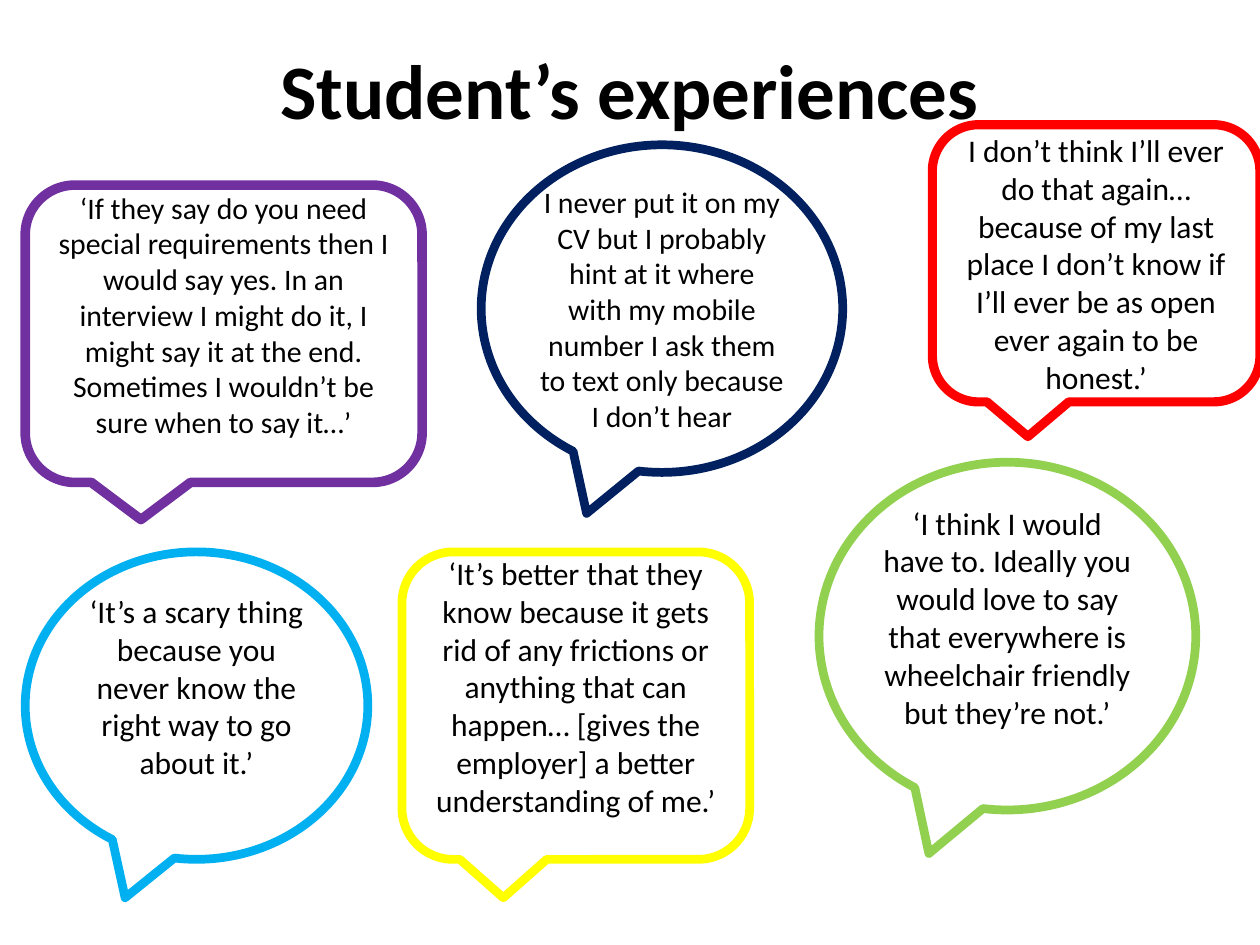
from lxml import etree
from pptx import Presentation
from pptx.dml.color import RGBColor
from pptx.enum.shapes import MSO_SHAPE
from pptx.enum.text import MSO_ANCHOR, PP_ALIGN
from pptx.oxml.ns import qn
from pptx.util import Pt

ROUND = MSO_SHAPE.ROUNDED_RECTANGULAR_CALLOUT
OVAL = MSO_SHAPE.OVAL_CALLOUT
CENTER = PP_ALIGN.CENTER
TOP, MIDDLE = MSO_ANCHOR.TOP, MSO_ANCHOR.MIDDLE

BLACK = RGBColor(0x00, 0x00, 0x00)
PURPLE = RGBColor(0x70, 0x30, 0xA0)
RED = RGBColor(0xFF, 0x00, 0x00)
BLUE = RGBColor(0x00, 0xB0, 0xF0)
GREEN = RGBColor(0x92, 0xD0, 0x50)
YELLOW = RGBColor(0xFF, 0xFF, 0x00)
NAVY = RGBColor(0x00, 0x20, 0x60)

TITLE = "Student’s experiences"
THIN = (3, 3, 3, 3)
RAISED = (3, 3, 3, 25)
WIDE_RAISED = (7.2, 3.6, 7.2, 25.6)

QUOTES = [
    (ROUND, (14.4, 105.8, 226.8, 169.9), PURPLE, 5.5, 17, RAISED,
     "‘If they say do you need special requirements then I would say yes. "
     "In an interview I might do it, I might say it at the end. "
     "Sometimes I wouldn’t be sure when to say it…’"),
    (ROUND, (532.8, 71.3, 187.2, 158.4), RED, 5.25, 18, THIN,
     "I don’t think I’ll ever do that again… because of my last place "
     "I don’t know if I’ll ever be as open ever again to be honest.’"),
    (OVAL, (14.4, 315.4, 195.8, 175.7), BLUE, 5, 18, RAISED,
     "‘It’s a scary thing because you never know the right way to go about it.’"),
    (OVAL, (468, 264.2, 215.3, 198.7), GREEN, 5, 18, RAISED,
     "‘I think I would have to. Ideally you would love to say that "
     "everywhere is wheelchair friendly but they’re not.’"),
    (ROUND, (229.7, 315.4, 198.7, 175.7), YELLOW, 5, 18, WIDE_RAISED,
     "‘It’s better that they know because it gets rid of any frictions or "
     "anything that can happen… [gives the employer] a better understanding of me.’"),
    (OVAL, (275, 82.8, 206.6, 187.2), NAVY, 5, 17, THIN,
     "I never put it on my CV but I probably hint at it where with my "
     "mobile number I ask them to text only because I don’t hear"),
]


def set_text(sp, text, size, bold=False, anchor=MIDDLE, insets=(7.2, 3.6, 7.2, 3.6)):
    tf = sp.text_frame
    tf.word_wrap = True
    tf.vertical_anchor = anchor
    tf.margin_left, tf.margin_top, tf.margin_right, tf.margin_bottom = map(Pt, insets)
    p = tf.paragraphs[0]
    p.alignment = CENTER
    r = p.add_run()
    r.text = text
    r.font.name = "Calibri"
    r.font.size = Pt(size)
    r.font.bold = bold
    r.font.color.rgb = BLACK


def add_callout(s, shape, box, color, width, size, insets, text):
    sp = s.shapes.add_shape(shape, *map(Pt, box))
    sp.shadow.inherit = False
    sp.fill.background()
    sp.line.color.rgb = color
    sp.line.width = Pt(width)
    etree.SubElement(sp.line._get_or_add_ln(), qn("a:round"))
    set_text(sp, text, size, insets=insets)


def main():
    prs = Presentation()
    prs.slide_width, prs.slide_height = Pt(720), Pt(540)
    s = prs.slides.add_slide(prs.slide_layouts[6])
    for quote in QUOTES:
        add_callout(s, *quote)
    title = s.shapes.add_textbox(Pt(54), Pt(20.9), Pt(612), Pt(60.5))
    set_text(title, TITLE, 44, bold=True, anchor=TOP)
    prs.save("out.pptx")


if __name__ == "__main__":
    main()
